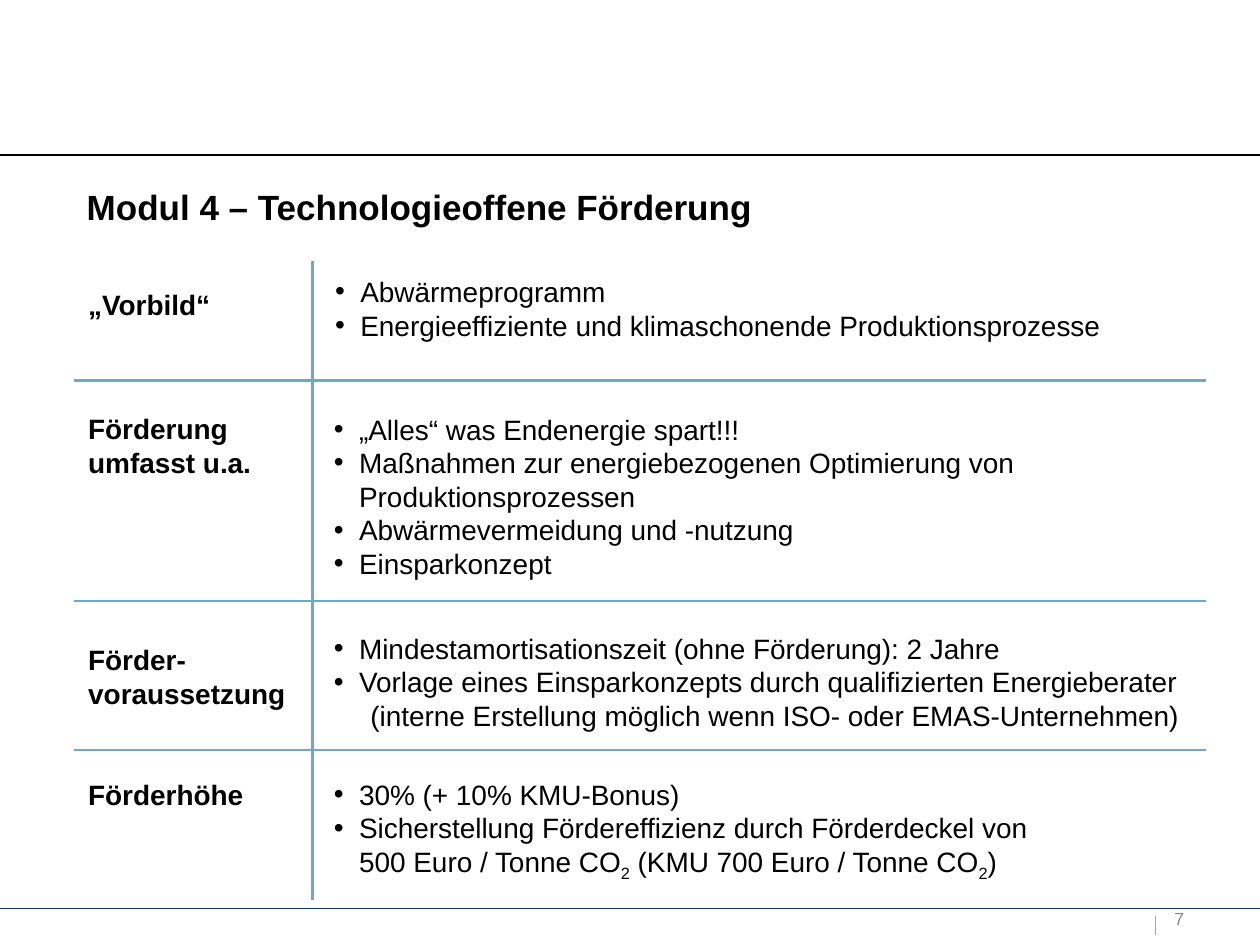
from dataclasses import dataclass

from lxml.etree import SubElement
from pptx import Presentation
from pptx.dml.color import RGBColor
from pptx.enum.shapes import MSO_CONNECTOR
from pptx.oxml.ns import qn
from pptx.util import Inches, Pt

COLORS = {
    "text": "000000",
    "header": "000000",
    "footer": "17375E",
    "grid": "6CAAC0",
    "marker": "A6A6A6",
    "number": "888888",
}
FONT = "Arial"
LABEL_LEFT, LABEL_INDENT = 0.51, 0.19
BULLET_INDENT, BULLET_HANGING, NOTE_INDENT = 0.29, 0.2, 0.38
GRID_LEFT, GRID_RIGHT, GRID_COLUMN = 0.59, 9.57, 2.48


@dataclass
class Item:
    """One paragraph; every second wording is a subscript."""
    wordings: tuple[str, ...]
    indent: float = 0
    bullet: bool = False
    size: float = 16
    bold: bool = False
    color: str = "text"


@dataclass
class Row:
    label: str
    label_top: float
    label_size: tuple[float, float]
    items: list[Item]
    items_at: tuple[float, float, float, float]


@dataclass
class Line:
    start: tuple[float, float]
    end: tuple[float, float]
    color: str
    width: float


def bullet(*wordings: str) -> Item:
    return Item(wordings, BULLET_INDENT, bullet=True)


def add_line(slide, line: Line) -> None:
    connector = slide.shapes.add_connector(
        MSO_CONNECTOR.STRAIGHT, *map(Inches, line.start + line.end))
    connector.line.color.rgb = RGBColor.from_string(COLORS[line.color])
    connector.line.width = Pt(line.width)
    SubElement(connector._element.spPr, qn("a:effectLst"))


def fill_paragraph(paragraph, item: Item) -> None:
    properties = paragraph._p.get_or_add_pPr()
    properties.set("marL", str(Inches(item.indent)))
    if item.bullet:
        properties.set("indent", str(-Inches(BULLET_HANGING)))
        SubElement(properties, qn("a:buFont"), typeface=FONT)
        SubElement(properties, qn("a:buChar"), char="•")

    paragraph.text = item.wordings[0]
    for number, wording in enumerate(item.wordings[1:], 1):
        run = paragraph.add_run()
        run.text = wording
        if number % 2:
            run._r.get_or_add_rPr().set("baseline", "-25000")
    for run in paragraph.runs:
        run.font.name = FONT
        run.font.size = Pt(item.size)
        run.font.bold = item.bold
        run.font.color.rgb = RGBColor.from_string(COLORS[item.color])


def add_text(slide, at: tuple[float, float, float, float], items: list[Item],
             inset: bool = False) -> None:
    text_frame = slide.shapes.add_textbox(*map(Inches, at)).text_frame
    text_frame.word_wrap = True
    if not inset:
        text_frame.margin_left = text_frame.margin_right = 0
        text_frame.margin_top = text_frame.margin_bottom = 0
    for number, item in enumerate(items):
        paragraph = text_frame.add_paragraph() if number else text_frame.paragraphs[0]
        fill_paragraph(paragraph, item)


def add_row(slide, row: Row) -> None:
    label = Item((row.label,), LABEL_INDENT, bold=True)
    add_text(slide, (LABEL_LEFT, row.label_top, *row.label_size), [label])
    add_text(slide, row.items_at, row.items)


ROWS = [
    Row("„Vorbild“", 2.28, (1.42, 0.27), [
        bullet("Abwärmeprogramm"),
        bullet("Energieeffiziente und klimaschonende Produktionsprozesse"),
    ], (2.57, 2.18, 6.61, 0.54)),
    Row("Förderung umfasst u.a.", 3.27, (1.81, 0.54), [
        bullet("„Alles“ was Endenergie spart!!!"),
        bullet("Maßnahmen zur energiebezogenen Optimierung von Produktionsprozessen"),
        bullet("Abwärmevermeidung und -nutzung"),
        bullet("Einsparkonzept"),
    ], (2.56, 3.27, 7.01, 1.35)),
    Row("Förder-voraussetzung", 5.1, (1.89, 0.54), [
        bullet("Mindestamortisationszeit (ohne Förderung): 2 Jahre"),
        bullet("Vorlage eines Einsparkonzepts durch qualifizierten Energieberater"),
        Item(("(interne Erstellung möglich wenn ISO- oder EMAS-Unternehmen)",),
             NOTE_INDENT),
    ], (2.56, 5.01, 7.17, 0.81)),
    Row("Förderhöhe", 6.17, (1.72, 0.27), [
        bullet("30% (+ 10% KMU-Bonus)"),
        bullet("Sicherstellung Fördereffizienz durch Förderdeckel von \v500 Euro / Tonne CO",
               "2", " (KMU 700 Euro / Tonne CO", "2", ")"),
    ], (2.56, 6.17, 6.93, 0.81)),
]

FRAME_LINES = [
    Line((0, 1.23), (10, 1.23), "header", 0.75),
    Line((0, 7.21), (10, 7.21), "footer", 0.75),
    Line((9.17, 7.27), (9.17, 7.42), "marker", 0.75),
]
GRID_LINES = [Line((GRID_COLUMN, 2.07), (GRID_COLUMN, 7.14), "grid", 1.25)] + [
    Line((GRID_LEFT, y), (GRID_RIGHT, y), "grid", 1.25) for y in (3.02, 4.77, 5.95)
]


def main() -> None:
    presentation = Presentation()
    presentation.slide_width, presentation.slide_height = Inches(10), Inches(7.5)
    slide = presentation.slides.add_slide(presentation.slide_layouts[6])

    # Header and footer
    for line in FRAME_LINES:
        add_line(slide, line)
    add_text(slide, (9.32, 7.21, 0.64, 0.17), [Item(("7",), size=10, color="number")])

    # Title
    title = Item(("Modul 4 – Technologieoffene Förderung",), size=20, bold=True)
    add_text(slide, (0.59, 1.42, 8.9, 0.44), [title], inset=True)

    # Rows and their dividers
    for row in ROWS:
        add_row(slide, row)
    for line in GRID_LINES:
        add_line(slide, line)

    presentation.save("out.pptx")


if __name__ == "__main__":
    main()
